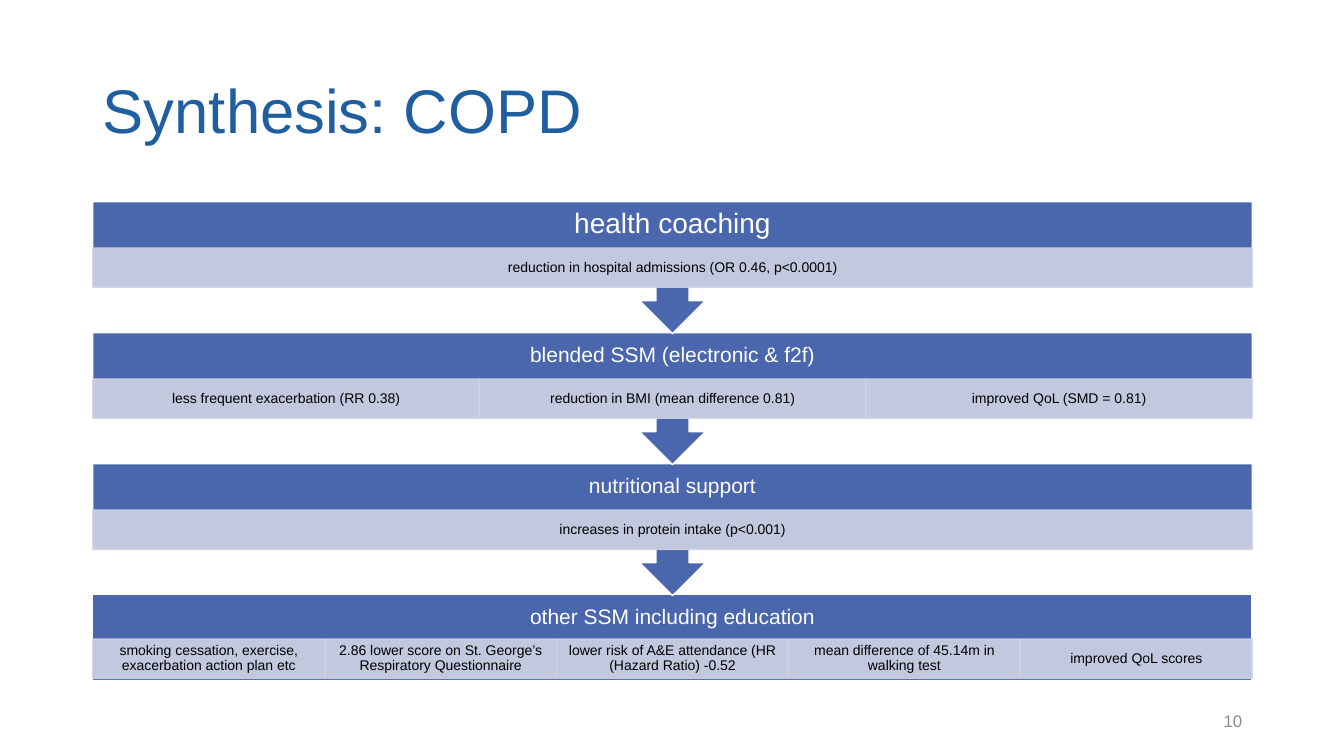
import dataclasses

import pptx
import pptx.dml.color
import pptx.enum.shapes
import pptx.enum.text
import pptx.oxml
import pptx.oxml.ns
import pptx.util

Inches = pptx.util.Inches
Pt = pptx.util.Pt
RGBColor = pptx.dml.color.RGBColor
Align = pptx.enum.text.PP_ALIGN
ShapeType = pptx.enum.shapes.MSO_SHAPE


@dataclasses.dataclass(frozen=True)
class Theme:
    """Colours, font and type sizes of the slide."""
    font: str = "Arial"
    title: str = "1F5FA0"
    step: str = "4A66AC"
    finding: str = "D0D3E3"
    white: str = "FFFFFF"
    black: str = "000000"
    number: str = "8C8C8C"
    title_size: float = 44
    lead_size: float = 20
    step_size: float = 15
    finding_size: float = 10
    number_size: float = 12


THEME = Theme()
STEPS = [
    ("health coaching", THEME.lead_size,
     ["reduction in hospital admissions (OR 0.46, p<0.0001)"]),
    ("blended SSM (electronic & f2f)", THEME.step_size,
     ["less frequent exacerbation (RR 0.38)",
      "reduction in BMI (mean difference 0.81)",
      "improved QoL (SMD = 0.81)"]),
    ("nutritional support", THEME.step_size,
     ["increases in protein intake (p<0.001)"]),
    ("other SSM including education", THEME.step_size,
     ["smoking cessation, exercise, exacerbation action plan etc",
      "2.86 lower score on St. George’s Respiratory Questionnaire",
      "lower risk of A&E attendance (HR (Hazard Ratio) -0.52",
      "mean difference of 45.14m in walking test",
      "improved QoL scores"]),
]


def write_text(shape, text, size, color, alignment, margins=(0.1, 0.05), spacing=0.9):
    """Fill a shape with one vertically centred paragraph."""
    frame = shape.text_frame
    frame.word_wrap = True
    frame.auto_size = pptx.enum.text.MSO_AUTO_SIZE.NONE
    frame.vertical_anchor = pptx.enum.text.MSO_ANCHOR.MIDDLE
    frame.margin_left = frame.margin_right = Inches(margins[0])
    frame.margin_top = frame.margin_bottom = Inches(margins[1])
    frame.text = text
    paragraph = frame.paragraphs[0]
    paragraph.alignment = alignment
    paragraph.line_spacing = spacing
    paragraph.font.name = THEME.font
    paragraph.font.size = Pt(size)
    paragraph.font.color.rgb = RGBColor.from_string(color)


def add_block(slide, kind, box, fill, line):
    """Add a filled and outlined preset shape without a shadow."""
    shape = slide.shapes.add_shape(kind, *map(Inches, box))
    shape.shadow.inherit = False
    shape.fill.solid()
    shape.fill.fore_color.rgb = RGBColor.from_string(fill)
    shape.line.color.rgb = RGBColor.from_string(line)
    shape.line.width = Pt(1)
    return shape


def set_opacity(shape, percent):
    """Apply one opacity to the fill and the outline of a shape."""
    for color in shape.element.spPr.iter(pptx.oxml.ns.qn("a:srgbClr")):
        alpha = pptx.oxml.parse_xml(
            f'<a:alpha {pptx.oxml.ns.nsdecls("a")} val="{percent * 1000}"/>')
        color.append(alpha)


def add_title(slide, text, box):
    """Place the title placeholder in the box."""
    title = slide.shapes.title
    title.left, title.top, title.width, title.height = map(Inches, box)
    write_text(title, text, THEME.title_size, THEME.title, Align.LEFT)


def add_step(slide, step, box, is_last):
    """Draw one step: its block, its heading and a row of findings."""
    heading, size, findings = step
    left, top, width, height = box
    if is_last:
        add_block(slide, ShapeType.RECTANGLE, (left, top, width, 0.85),
                  THEME.step, THEME.white)
    else:
        callout = add_block(slide, ShapeType.UP_ARROW_CALLOUT, box,
                            THEME.step, THEME.white)
        callout.rotation = 180
    label = slide.shapes.add_textbox(*map(Inches, (left, top, width, 0.46)))
    write_text(label, heading, size, THEME.white, Align.CENTER, (0.12, 0.12))

    row_top = top + (0.44 if is_last else 0.46)
    cell_width = width / len(findings)
    for index, finding in enumerate(findings):
        cell_box = (left + index * cell_width, row_top, cell_width, 0.39)
        cell = add_block(slide, ShapeType.RECTANGLE, cell_box,
                         THEME.finding, THEME.finding)
        set_opacity(cell, 90)
        write_text(cell, finding, THEME.finding_size, THEME.black,
                   Align.CENTER, (0.08, 0.01))


def add_process(slide, steps, box):
    """Stack the steps from the bottom up so each arrow overlaps the next step."""
    left, top, width, pitch = box
    last = len(steps) - 1
    for index in range(last, -1, -1):
        step_box = (left, top + index * pitch, width, 1.31)
        add_step(slide, steps[index], step_box, index == last)


def add_slide_number(slide, text, box):
    """Write the slide number at the right of the box."""
    number = slide.shapes.add_textbox(*map(Inches, box))
    write_text(number, text, THEME.number_size, THEME.number, Align.RIGHT, spacing=1.0)


def main():
    """Build and save the slide."""
    presentation = pptx.Presentation()
    presentation.slide_width = Inches(13.33)
    presentation.slide_height = Inches(7.5)
    slide = presentation.slides.add_slide(presentation.slide_layouts[5])
    add_title(slide, "Synthesis: COPD", (0.92, 0.4, 11.5, 1.45))
    add_process(slide, STEPS, (0.92, 2, 11.5, 1.3))
    add_slide_number(slide, "10", (9.42, 6.95, 3, 0.4))
    presentation.save("out.pptx")


if __name__ == "__main__":
    main()
